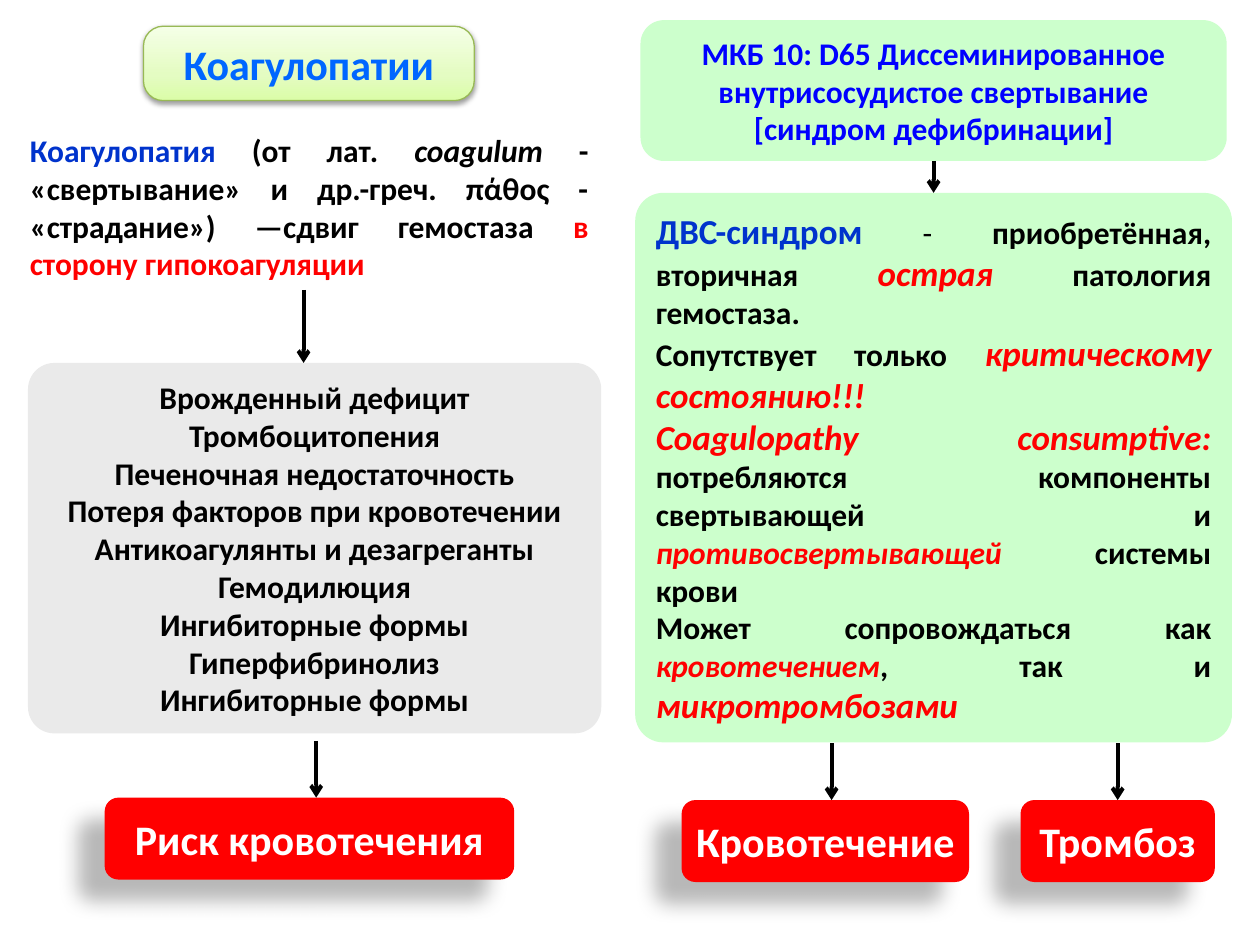
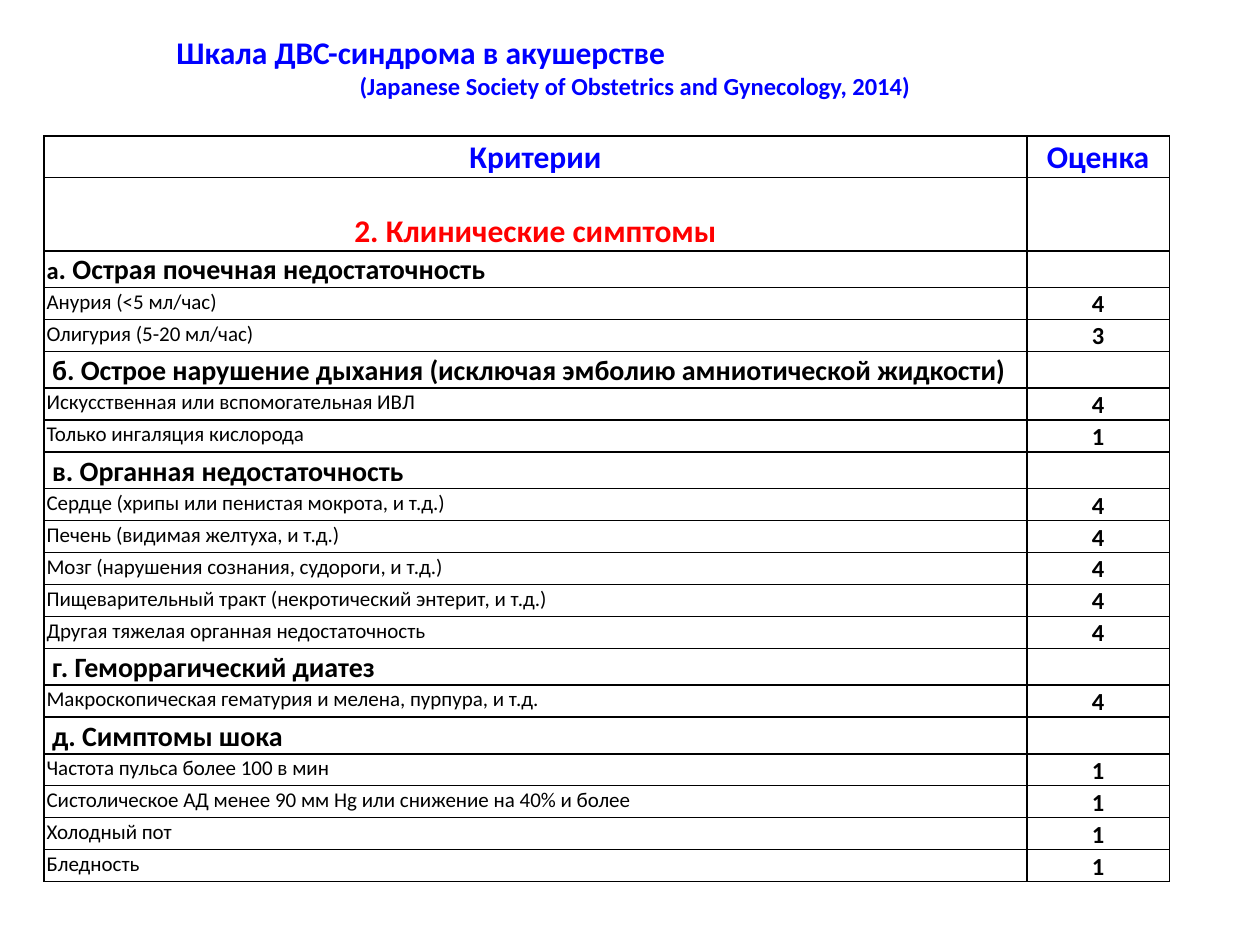
from copy import deepcopy

from lxml import etree
from pptx import Presentation
from pptx import util as u
from pptx.dml.color import RGBColor
from pptx.enum import shapes, text
from pptx.oxml import ns

FONT = "Calibri"
BLACK, WHITE, RED = "000000", "FFFFFF", "FF0000"
BLUE, DEEP_BLUE, TITLE_BLUE = "0000FF", "0033CC", "0066FF"
GREEN, GRAY = "CCFFCC", "EAEAEA"
PILL_STOPS = [(0, "DAFDA7"), (0.35, "E4FCC2"), (1, "F5FFE7")]
ALIGN, ANCHOR = text.PP_ALIGN, text.MSO_ANCHOR

ACCENT = dict(size=20, color=RED, italic=True)
TERM = dict(color=RED, italic=True)

CAUSES = [
    "Врожденный дефицит",
    "Тромбоцитопения",
    "Печеночная недостаточность",
    "Потеря факторов при кровотечении",
    "Антикоагулянты и дезагреганты",
    "Гемодилюция",
    "Ингибиторные формы",
    "Гиперфибринолиз",
    "Ингибиторные формы",
]
DEFINITION = [[
    ("Коагулопатия", dict(color=DEEP_BLUE)),
    " (от лат. ",
    ("coagulum", dict(italic=True)),
    " - «свертывание» и др.-греч. πάθος - «страдание») —сдвиг гемостаза ",
    ("в сторону гипокоагуляции", dict(color=RED)),
]]
DIC_SYNDROME = [
    [("ДВС-синдром", dict(size=20, color=DEEP_BLUE)), (" - ", dict(bold=False)),
     "приобретённая, вторичная ", ("острая", ACCENT), " патология гемостаза."],
    ["Сопутствует только ", ("критическому состоянию!!!", ACCENT)],
    [("Сoagulopathy consumptive: ", ACCENT),
     "потребляются компоненты свертывающей и ",
     ("противосвертывающей ", TERM), "системы крови"],
    ["Может сопровождаться как ", ("кровотечением", TERM), ", так и ",
     ("микротромбозами", ACCENT)],
]
# Each section holds its heading and its (criterion, score) pairs.
SECTIONS = [
    ([("а", dict(size=14)), ". Острая почечная недостаточность"], [
        ("Анурия (<5 мл/час)", 4),
        ("Олигурия (5-20 мл/час)", 3)]),
    (["б. Острое нарушение дыхания (исключая эмболию амниотической жидкости)"], [
        ("Искусственная или вспомогательная ИВЛ", 4),
        ("Только ингаляция кислорода", 1)]),
    (["в. Органная недостаточность"], [
        ("Сердце (хрипы или пенистая мокрота, и т.д.)", 4),
        ("Печень (видимая желтуха, и т.д.)", 4),
        ("Мозг (нарушения сознания, судороги, и т.д.)", 4),
        ("Пищеварительный тракт (некротический энтерит, и т.д.)", 4),
        ("Другая тяжелая органная недостаточность", 4)]),
    (["г. Геморрагический диатез"], [
        ("Макроскопическая гематурия и мелена, пурпура, и т.д.", 4)]),
    (["д. Симптомы шока"], [
        ("Частота пульса более 100 в мин", 1),
        ("Систолическое АД менее 90 мм Hg или снижение на 40% и более", 1),
        ("Холодный пот", 1),
        ("Бледность", 1)]),
]


def rgb(value):
    return RGBColor.from_string(value)


def points(*lengths):
    return [u.Pt(length) for length in lengths]


def add_xml(parent, tag, **attributes):
    return etree.SubElement(parent, ns.qn(tag), attributes)


def write(frame, paragraphs, size=18, color=BLACK, bold=True, italic=False,
          align=ALIGN.CENTER, anchor=ANCHOR.MIDDLE, spacing=None):
    """Fill a frame; a paragraph is a string or a list of strings and (text, format) spans."""
    frame.word_wrap = True
    frame.vertical_anchor = anchor
    base = dict(size=size, color=color, bold=bold, italic=italic)
    for index, content in enumerate(paragraphs):
        para = frame.add_paragraph() if index else frame.paragraphs[0]
        para.alignment = align
        para.line_spacing = spacing
        for span in [content] if isinstance(content, str) else content:
            words, changes = (span, {}) if isinstance(span, str) else span
            look = {**base, **changes}
            run = para.add_run()
            run.text = words
            run.font.name = FONT
            run.font.size = u.Pt(look["size"])
            run.font.bold = look["bold"]
            run.font.italic = look["italic"]
            run.font.color.rgb = rgb(look["color"])


def add_title(slide, place, paragraphs, **look):
    title = slide.shapes.title
    title.left, title.top, title.width, title.height = points(*place)
    title.text_frame.auto_size = text.MSO_AUTO_SIZE.NONE
    write(title.text_frame, paragraphs, **look)
    return title


def add_panel(slide, place, fill, corner=0.167):
    panel = slide.shapes.add_shape(
        shapes.MSO_SHAPE.ROUNDED_RECTANGLE, *points(*place))
    panel.adjustments[0] = corner
    panel.shadow.inherit = False
    panel.fill.solid()
    panel.fill.fore_color.rgb = rgb(fill)
    panel.line.fill.background()
    return panel


def add_shadow(shape, alpha, blur, distance, angle):
    effects = shape.element.spPr.find(ns.qn("a:effectLst"))
    shadow = add_xml(effects, "a:outerShdw", blurRad=str(u.Pt(blur)),
                     dist=str(u.Pt(distance)), dir=str(angle * 60000),
                     algn="ctr", rotWithShape="0")
    shade = add_xml(shadow, "a:srgbClr", val=BLACK)
    add_xml(shade, "a:alpha", val=str(alpha * 1000))


def add_pill(slide, place):
    """Draw the gradient plate and put it behind the title."""
    pill = add_panel(slide, place, GREEN, corner=0.266)
    pill.fill.gradient()
    pill.fill.gradient_angle = 90
    stops = pill.element.spPr.find(".//" + ns.qn("a:gsLst"))
    stops.insert(1, deepcopy(stops[0]))
    for stop, (position, color) in zip(pill.fill.gradient_stops, PILL_STOPS):
        stop.position = position
        stop.color.rgb = rgb(color)
    pill.line.color.rgb = rgb("98B955")
    pill.line.width = u.Pt(0.75)
    add_shadow(pill, 38, 3.1, 1.6, 90)
    slide.shapes.title.element.addprevious(pill.element)


def add_outcome(slide, place, label):
    outcome = add_panel(slide, place, RED)
    add_shadow(outcome, 28, 11.8, 19.7, 141)
    frame = outcome.text_frame
    frame.margin_left = frame.margin_right = u.Pt(4.3)
    frame.margin_top = frame.margin_bottom = u.Pt(4.3)
    write(frame, [label], size=24, color=WHITE)
    return outcome


def add_arrow(slide, x, top, bottom, source=None, target=None):
    """Draw a downward arrow, joined to the shapes given."""
    arrow = slide.shapes.add_connector(
        shapes.MSO_CONNECTOR.STRAIGHT, *points(x, top, x, bottom))
    if source is not None:
        arrow.begin_connect(source, 2)
    if target is not None:
        arrow.end_connect(target, 0)
    arrow.line.color.rgb = rgb(BLACK)
    arrow.line.width = u.Pt(2.25)
    add_xml(arrow.element.spPr.find(ns.qn("a:ln")), "a:tailEnd", type="arrow")
    add_xml(arrow.element.spPr, "a:effectLst")


def add_borders(cell):
    props = cell._tc.get_or_add_tcPr()
    for index, side in enumerate(("a:lnL", "a:lnR", "a:lnT", "a:lnB")):
        border = etree.Element(ns.qn(side), w=str(u.Pt(1)))
        add_xml(add_xml(border, "a:solidFill"), "a:srgbClr", val=BLACK)
        props.insert(index, border)


def fill_cell(cell, content, indent=0, **look):
    cell.margin_left, cell.margin_right = points(1.44 + indent, 1.44)
    cell.margin_top = cell.margin_bottom = 0
    cell.fill.background()
    add_borders(cell)
    if content:
        write(cell.text_frame, [content], spacing=1.07, **look)
        cell.vertical_anchor = look.get("anchor", ANCHOR.TOP)
    else:
        add_xml(cell.text_frame.paragraphs[0]._p, "a:endParaRPr", sz="1400")


def score_rows():
    """List the table rows as (height, criterion, score, criterion format, score format)."""
    head = dict(color=BLUE)
    rows = [
        (23.7, "Критерии", "Оценка", head, head),
        (41.8, "2. Клинические симптомы", "",
         dict(color=RED, anchor=ANCHOR.BOTTOM), {}),
    ]
    for number, (heading, criteria) in enumerate(SECTIONS):
        rows.append((21, heading, "", dict(
            size=16, align=ALIGN.LEFT, indent=3.2 if number else 0), {}))
        for criterion, score in criteria:
            rows.append((18.2, criterion, str(score),
                         dict(size=12, bold=False, align=ALIGN.LEFT),
                         dict(size=14)))
    return rows


def add_score_table(slide, left, top, widths):
    rows = score_rows()
    height = sum(row[0] for row in rows)
    table = slide.shapes.add_table(
        len(rows), 2, *points(left, top, sum(widths), height)).table
    table.first_row = table.horz_banding = False
    for column, width in zip(table.columns, widths):
        column.width = u.Pt(width)
    for index, (height, criterion, score, look, score_look) in enumerate(rows):
        table.rows[index].height = u.Pt(height)
        fill_cell(table.cell(index, 0), criterion, **look)
        fill_cell(table.cell(index, 1), score, **score_look)


def build_coagulopathy(slide):
    title_place = (82, 15, 189, 42.5)
    add_pill(slide, title_place)
    add_title(slide, title_place, ["Коагулопатии"], size=24, color=TITLE_BLUE)

    definition = slide.shapes.add_textbox(*points(10, 71.3, 333.4, 94.3))
    write(definition.text_frame, DEFINITION,
          align=ALIGN.JUSTIFY, anchor=ANCHOR.TOP)

    causes = add_panel(slide, (16, 207.4, 327.6, 211.7), GRAY, corner=0.071)
    write(causes.text_frame, CAUSES)

    code = add_panel(slide, (366, 11.5, 335, 80.5), GREEN)
    write(code.text_frame, ["МКБ 10: D65 Диссеминированное внутрисосудистое "
                            "свертывание [синдром дефибринации]"], color=BLUE)

    syndrome = add_panel(slide, (363, 110.2, 341, 314), GREEN, corner=0.051)
    write(syndrome.text_frame, DIC_SYNDROME, align=ALIGN.JUSTIFY)

    add_outcome(slide, (59.8, 455.8, 234, 46.8), "Риск кровотечения")
    add_outcome(slide, (389.5, 457.2, 164.2, 46.8), "Кровотечение")
    thrombosis = add_outcome(slide, (583.2, 457.2, 111, 46.8), "Тромбоз")

    add_arrow(slide, 173.5, 165.6, 207.4)
    add_arrow(slide, 180.7, 423.4, 455.8)
    add_arrow(slide, 475.2, 424.8, 457.2)
    add_arrow(slide, 638.7, 424.8, 457.2, target=thrombosis)
    add_arrow(slide, 533.5, 92, 110.2, source=code, target=syndrome)


def build_score(slide):
    title = add_title(slide, (93.6, 15.1, 538.6, 63.4), [
        "Шкала ДВС-синдрома в акушерстве",
        [("(Japanese Society of Obstetrics and Gynecology, 2014)", dict(size=14))],
    ], color=BLUE, anchor=ANCHOR.TOP)
    title.text_frame.paragraphs[0].alignment = ALIGN.LEFT
    add_score_table(slide, 25.2, 77.8, (561.6, 81.4))


def main():
    deck = Presentation()
    deck.slide_width, deck.slide_height = points(720, 540)
    title_only = deck.slide_layouts[5]
    for build in (build_coagulopathy, build_score):
        build(deck.slides.add_slide(title_only))
    deck.save("out.pptx")


if __name__ == "__main__":
    main()
